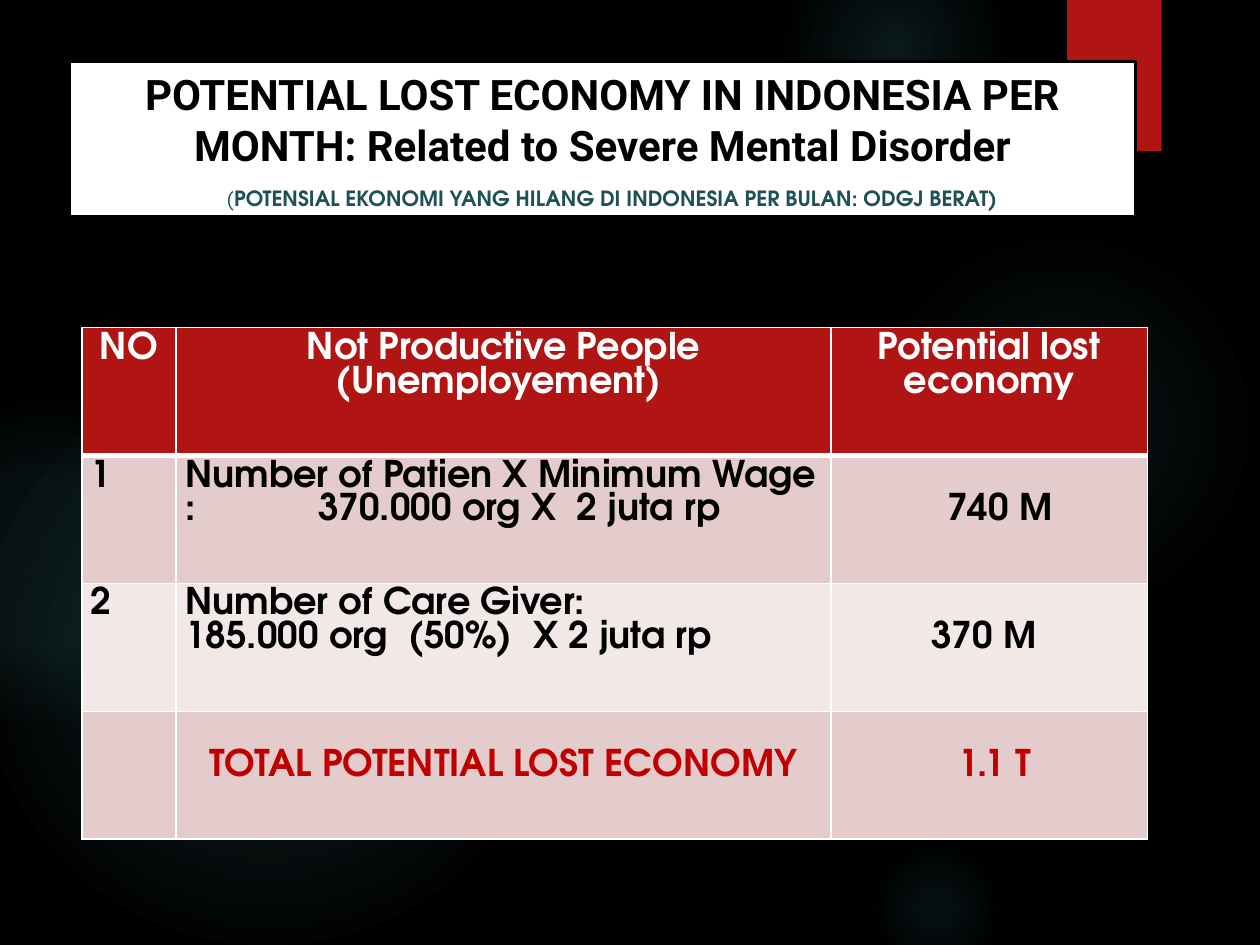
from lxml import etree
from pptx import Presentation
from pptx.dml.color import RGBColor
from pptx.enum import shapes, text
from pptx.oxml import parse_xml
from pptx.oxml.ns import qn
from pptx.util import Pt

BLACK = RGBColor(0, 0, 0)
WHITE = RGBColor(255, 255, 255)
RED = RGBColor(0xB0, 0x15, 0x13)
TOTAL_RED = RGBColor(0xC0, 0, 0)
TEAL = RGBColor(0x1E, 0x51, 0x55)
GLOW = RGBColor(0x50, 0xB9, 0xC1)
ROSE = RGBColor(0xE4, 0xCC, 0xCC)
PALE_ROSE = RGBColor(0xF2, 0xE8, 0xE7)
HEADING_FONT, BODY_FONT = "Roboto", "TeX Gyre Adventor"
DRAWING_NS = "http://schemas.openxmlformats.org/drawingml/2006/main"
CENTER, LEFT = text.PP_ALIGN.CENTER, text.PP_ALIGN.LEFT

# Left, top, diameter, then (position, opacity) stops in percent
GLOWS = [
    (496, 131.8, 221.8, [(0, 7), (36, 6), (69, 0)]),
    (448, -36, 126, [(0, 14), (36, 7), (73, 0)]),
    (496, 480, 78, [(0, 9), (36, 5), (66, 0)]),
    (-12, 210, 330, [(0, 11), (36, 10), (75, 0)]),
    (-66, 228, 186, [(0, 8), (36, 8), (72, 0)]),
]
COLUMNS = [53.8, 374.4, 180.6]
ROW_HEIGHT = 73.1
LINE_PITCH = 19.2
# Each cell: paragraphs, alignment, lines skipped above, sideways shift
ROWS = [
    (RED, WHITE, [(["NO"], CENTER, 0, 0),
                  (["Not Productive People", "(Unemployement) "], CENTER, 0, 0),
                  (["Potential lost economy"], CENTER, 0, 0)]),
    (ROSE, BLACK, [(["1"], LEFT, 0, 0),
                   (["Number of Patien X Minimum Wage :\t370.000 org X  2 juta rp"], LEFT, 0, 0),
                   (["740 M"], CENTER, 1, 6)]),
    (PALE_ROSE, BLACK, [(["2"], LEFT, 0, 0),
                        (["Number of Care Giver:", "185.000 org  (50%)  X 2 juta rp"], LEFT, 0, 0),
                        (["370 M"], CENTER, 1, -3)]),
    (ROSE, TOTAL_RED, [([], LEFT, 0, 0),
                       (["TOTAL POTENTIAL LOST ECONOMY"], CENTER, 1, 0),
                       (["1.1 T"], CENTER, 1, 3)]),
]


def add_span(para, words, size, font, color, bold=True):
    span = para.add_run()
    span.text = words
    span.font.size, span.font.name, span.font.bold = Pt(size), font, bold
    span.font.color.rgb = color


def add_plain_shape(page, kind, left, top, width, height):
    shape = page.shapes.add_shape(kind, Pt(left), Pt(top), Pt(width), Pt(height))
    shape.shadow.inherit = False
    shape.line.fill.background()
    return shape


def add_backdrop(page):
    page.background.fill.solid()
    page.background.fill.fore_color.rgb = BLACK
    # Soft round glows
    for left, top, size, stops in GLOWS:
        glow = add_plain_shape(page, shapes.MSO_SHAPE.OVAL, left, top, size, size)
        stop_xml = "".join(
            f'<a:gs pos="{at * 1000}"><a:srgbClr val="{GLOW}">'
            f'<a:alpha val="{opacity * 1000}"/></a:srgbClr></a:gs>'
            for at, opacity in stops)
        gradient = parse_xml(
            f'<a:gradFill xmlns:a="{DRAWING_NS}"><a:gsLst>{stop_xml}</a:gsLst>'
            '<a:path path="circle"><a:fillToRect l="50000" t="50000" r="50000" b="50000"/>'
            '</a:path></a:gradFill>')
        glow._element.spPr.find(qn("a:prstGeom")).addnext(gradient)
    # Red tab
    tab = add_plain_shape(page, shapes.MSO_SHAPE.RECTANGLE, 609.8, 0, 54, 86.4)
    tab.fill.solid()
    tab.fill.fore_color.rgb = RED


def place_title(page, left, top, width, height):
    title = page.shapes.title
    page.shapes._spTree.append(title._element)  # in front of the red tab
    title.left, title.top, title.width, title.height = map(Pt, (left, top, width, height))
    title.fill.solid()
    title.fill.fore_color.rgb = WHITE
    title.line.color.rgb = BLACK
    title.line.width = Pt(1.5)
    frame = title.text_frame
    frame.word_wrap = True
    frame.auto_size = text.MSO_AUTO_SIZE.NONE
    frame.vertical_anchor = text.MSO_ANCHOR.MIDDLE
    frame.margin_top = frame.margin_bottom = 0
    heading = frame.paragraphs[0]
    subtitle = frame.add_paragraph()
    for para, pitch in ((heading, 29.2), (subtitle, 16)):
        para.alignment = CENTER
        para.line_spacing = Pt(pitch)
    add_span(heading, "POTENTIAL LOST ECONOMY IN INDONESIA PER MONTH: "
             "Related to Severe Mental Disorder", 24, HEADING_FONT, BLACK)
    subtitle.space_before = Pt(7.6)
    subtitle._p.get_or_add_pPr().set("marL", str(Pt(11)))
    add_span(subtitle, "(", 12, BODY_FONT, TEAL, bold=False)
    add_span(subtitle, "POTENSIAL EKONOMI YANG HILANG DI INDONESIA PER BULAN: ODGJ BERAT)",
             12, BODY_FONT, TEAL)


def set_borders(cell, bottom_width):
    properties = cell._tc.get_or_add_tcPr()
    widths = {"lnL": 1, "lnR": 1, "lnT": 1, "lnB": bottom_width}
    for position, (side, width) in enumerate(widths.items()):
        line = parse_xml(
            f'<a:{side} xmlns:a="{DRAWING_NS}" w="{Pt(width)}"><a:solidFill>'
            f'<a:srgbClr val="{WHITE}"/></a:solidFill></a:{side}>')
        properties.insert(position, line)


def fill_cell(cell, lines, alignment, skipped, shift, color):
    cell.margin_left = Pt(5.2 + max(2 * shift, 0))
    cell.margin_right = Pt(5.2 + max(-2 * shift, 0))
    cell.margin_top = Pt(2.6 + skipped * LINE_PITCH)
    cell.margin_bottom = Pt(2.6)
    for number, words in enumerate(lines):
        frame = cell.text_frame
        para = frame.add_paragraph() if number else frame.paragraphs[0]
        para.alignment = alignment
        if "\t" in words:
            tabs = etree.SubElement(para._p.get_or_add_pPr(), qn("a:tabLst"))
            etree.SubElement(tabs, qn("a:tab"), pos=str(Pt(76)), algn="l")
        add_span(para, words, 21, BODY_FONT, color)


def add_loss_table(page, left, top):
    frame = page.shapes.add_table(len(ROWS), len(COLUMNS), Pt(left), Pt(top),
                                  Pt(sum(COLUMNS)), Pt(ROW_HEIGHT * len(ROWS)))
    table = frame.table
    for column, width in zip(table.columns, COLUMNS):
        column.width = Pt(width)
    for row_number, (background, color, contents) in enumerate(ROWS):
        table.rows[row_number].height = Pt(ROW_HEIGHT)
        for column_number, content in enumerate(contents):
            cell = table.cell(row_number, column_number)
            cell.fill.solid()
            cell.fill.fore_color.rgb = background
            set_borders(cell, 1 if row_number else 3)
            fill_cell(cell, *content, color)


def main():
    deck = Presentation()
    deck.slide_width, deck.slide_height = Pt(720), Pt(540)
    page = deck.slides.add_slide(deck.slide_layouts[5])
    add_backdrop(page)
    place_title(page, 39.8, 35.3, 609, 88.6)
    add_loss_table(page, 46.8, 187.2)
    deck.save("out.pptx")


if __name__ == "__main__":
    main()
